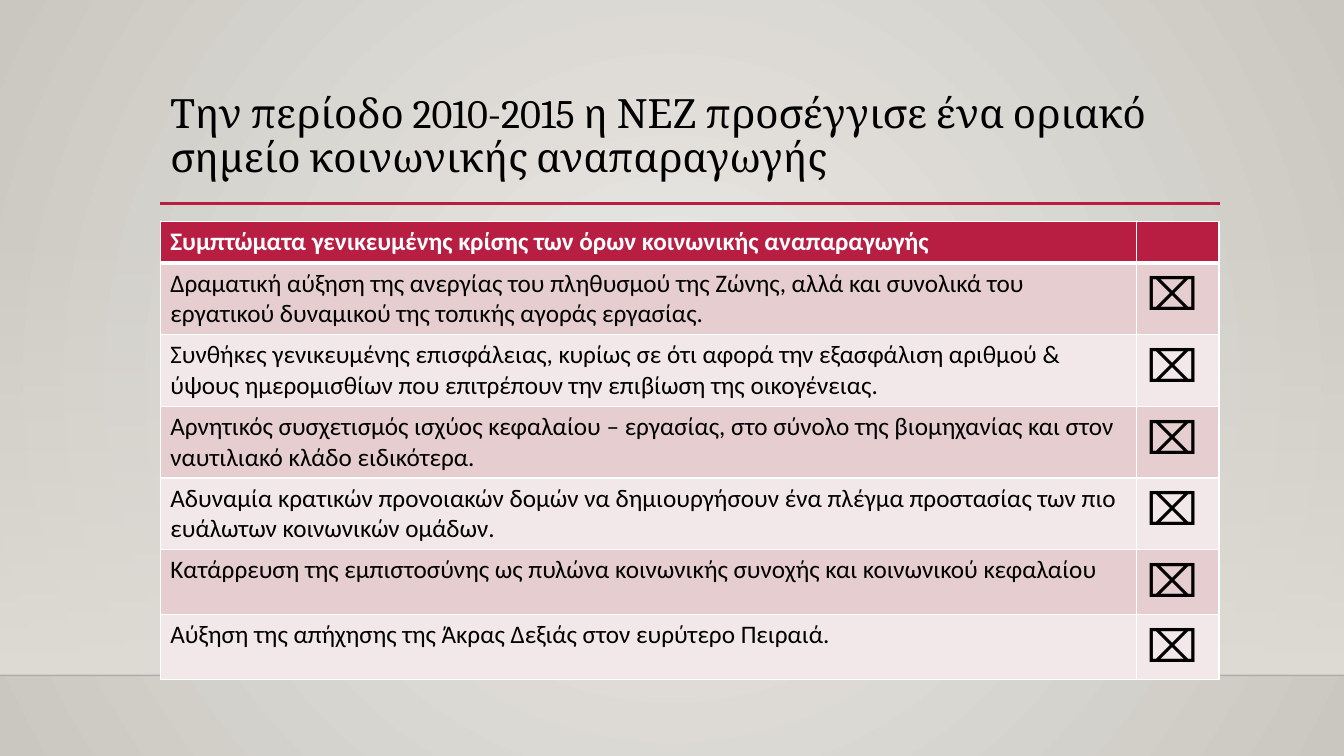
from dataclasses import dataclass

from lxml import etree
from pptx import Presentation
from pptx.dml.color import RGBColor
from pptx.enum.shapes import MSO_CONNECTOR, MSO_SHAPE
from pptx.enum.text import MSO_ANCHOR, MSO_AUTO_SIZE, PP_ALIGN
from pptx.oxml.ns import qn
from pptx.util import Inches, Pt

STRAIGHT = MSO_CONNECTOR.STRAIGHT
RECTANGLE = MSO_SHAPE.RECTANGLE
TOP = MSO_ANCHOR.TOP
LEFT = PP_ALIGN.LEFT
NO_AUTOFIT = MSO_AUTO_SIZE.NONE

WIDTH, HEIGHT = 13.33, 7.5
CRIMSON, WHITE, BLACK = "B71E42", "FFFFFF", "000000"
BANDS = ("E6CDCF", "F3E8E9")
BODY_FONT = {"name": "Calibri", "size": Pt(18), "bold": False}
HEADER_FONT = BODY_FONT | {"bold": True}
MARK_FONT = BODY_FONT | {"size": Pt(32)}
TITLE_FONT = {"name": "Cambria", "size": Pt(28.8), "bold": False}
TITLE = "Την περίοδο 2010-2015 η ΝΕΖ προσέγγισε ένα οριακό σημείο κοινωνικής αναπαραγωγής"
HEADER = "Συμπτώματα γενικευμένης κρίσης των όρων κοινωνικής αναπαραγωγής"
MARK = "⌧"


@dataclass
class Rule:
    left: float
    right: float
    top: float
    color: str
    weight: float
    opacity: int = 100


@dataclass
class Symptom:
    text: str
    height: float = 0.71


RULES = (
    Rule(0, WIDTH, 6.7, "000001", 1, 20),
    Rule(1.59, 12.1, 2.02, CRIMSON, 2.5),
)
SYMPTOMS = (
    Symptom("Δραματική αύξηση της ανεργίας του πληθυσμού της Ζώνης, αλλά και συνολικά "
            "του εργατικού δυναμικού της τοπικής αγοράς εργασίας."),
    Symptom("Συνθήκες γενικευμένης επισφάλειας, κυρίως σε ότι αφορά την εξασφάλιση αριθμού "
            "& ύψους ημερομισθίων που επιτρέπουν την επιβίωση της οικογένειας."),
    Symptom("Αρνητικός συσχετισμός ισχύος κεφαλαίου – εργασίας, στο σύνολο της βιομηχανίας "
            "και στον ναυτιλιακό κλάδο ειδικότερα."),
    Symptom("Αδυναμία κρατικών προνοιακών δομών να δημιουργήσουν ένα πλέγμα προστασίας των "
            "πιο ευάλωτων κοινωνικών ομάδων."),
    Symptom("Κατάρρευση της εμπιστοσύνης ως πυλώνα κοινωνικής συνοχής και κοινωνικού "
            "κεφαλαίου", 0.64),
    Symptom("Αύξηση της απήχησης της Άκρας Δεξιάς στον ευρύτερο Πειραιά.", 0.64),
)


def rgb(color: str) -> RGBColor:
    return RGBColor.from_string(color)


def set_opacity(color_element, percent: int) -> None:
    etree.SubElement(color_element, qn("a:alpha"), val=str(percent * 1000))


def set_gradient(fill, colors: tuple) -> None:
    fill.gradient()
    for stop, color in zip(fill.gradient_stops, colors):
        stop.color.rgb = rgb(color)


def write(frame, text: str, font: dict, color: str):
    paragraph = frame.paragraphs[0]
    paragraph.alignment = LEFT
    span = paragraph.add_run()
    span.text = text
    for name, value in font.items():
        setattr(span.font, name, value)
    span.font.color.rgb = rgb(color)
    return paragraph


def draw_background(page) -> None:
    set_gradient(page.background.fill, ("ECEAE7", "CAC7C1"))
    gradient = page.element.xpath(".//p:bg//a:gradFill")[0]
    gradient.remove(gradient.find(qn("a:lin")))
    circle = etree.SubElement(gradient, qn("a:path"), path="circle")
    center = dict.fromkeys("ltrb", "50000")
    etree.SubElement(circle, qn("a:fillToRect"), **center)


def draw_wall(page) -> None:
    wall = page.shapes.add_shape(RECTANGLE, 0, Inches(2.21), Inches(WIDTH), Inches(4.49))
    wall.shadow.inherit = False
    wall.line.fill.background()
    set_gradient(wall.fill, ("DFDBD5", "DFDBD5"))
    wall.fill.gradient_angle = 270
    set_opacity(wall.element.xpath(".//a:gs/a:srgbClr")[0], 0)


def draw_rule(page, rule: Rule) -> None:
    top = Inches(rule.top)
    line = page.shapes.add_connector(STRAIGHT, Inches(rule.left), top, Inches(rule.right), top)
    line.line.color.rgb = rgb(rule.color)
    line.line.width = Pt(rule.weight)
    if rule.opacity < 100:
        set_opacity(line.element.xpath(".//a:ln//a:srgbClr")[0], rule.opacity)
    etree.SubElement(line.element.spPr, qn("a:effectLst"))


def draw_title(page) -> None:
    box = page.shapes.title
    box.left, box.top, box.width, box.height = map(Inches, (1.59, 0.88, 10.5, 1.15))
    frame = box.text_frame
    frame.auto_size = NO_AUTOFIT
    frame.vertical_anchor = TOP
    frame.word_wrap = True
    write(frame, TITLE, TITLE_FONT, BLACK).line_spacing = 0.9


def format_cell(cell, fill: str, top: float, bottom: float) -> None:
    properties = cell._tc.get_or_add_tcPr()
    for side, weight in {"L": 1, "R": 1, "T": top, "B": bottom}.items():
        border = etree.SubElement(properties, qn(f"a:ln{side}"), w=str(Pt(weight)))
        solid = etree.SubElement(border, qn("a:solidFill"))
        etree.SubElement(solid, qn("a:srgbClr"), val=WHITE)
    cell.fill.solid()
    cell.fill.fore_color.rgb = rgb(fill)


def draw_table(page) -> None:
    heights = [0.41] + [symptom.height for symptom in SYMPTOMS]
    table = page.shapes.add_table(len(heights), 2, Inches(1.59), Inches(2.2),
                                  Inches(10.5), Inches(sum(heights))).table
    for column, width in zip(table.columns, (9.68, 0.82)):
        column.width = Inches(width)
    for row, height in zip(table.rows, heights):
        row.height = Inches(height)

    # Header row
    for cell in table.rows[0].cells:
        format_cell(cell, CRIMSON, 1, 3)
    write(table.cell(0, 0).text_frame, HEADER, HEADER_FONT, WHITE)

    # Symptom rows
    for index, symptom in enumerate(SYMPTOMS):
        contents = ((symptom.text, BODY_FONT), (MARK, MARK_FONT))
        for cell, (text, font) in zip(table.rows[index + 1].cells, contents):
            format_cell(cell, BANDS[index % 2], 1 if index else 3, 1)
            write(cell.text_frame, text, font, BLACK)


def main() -> None:
    deck = Presentation()
    deck.slide_width, deck.slide_height = Inches(WIDTH), Inches(HEIGHT)
    page = deck.slides.add_slide(deck.slide_layouts.get_by_name("Title Only"))

    # Backdrop
    draw_background(page)
    draw_wall(page)
    for rule in RULES:
        draw_rule(page, rule)

    # Content
    draw_title(page)
    draw_table(page)
    deck.save("out.pptx")


if __name__ == "__main__":
    main()
